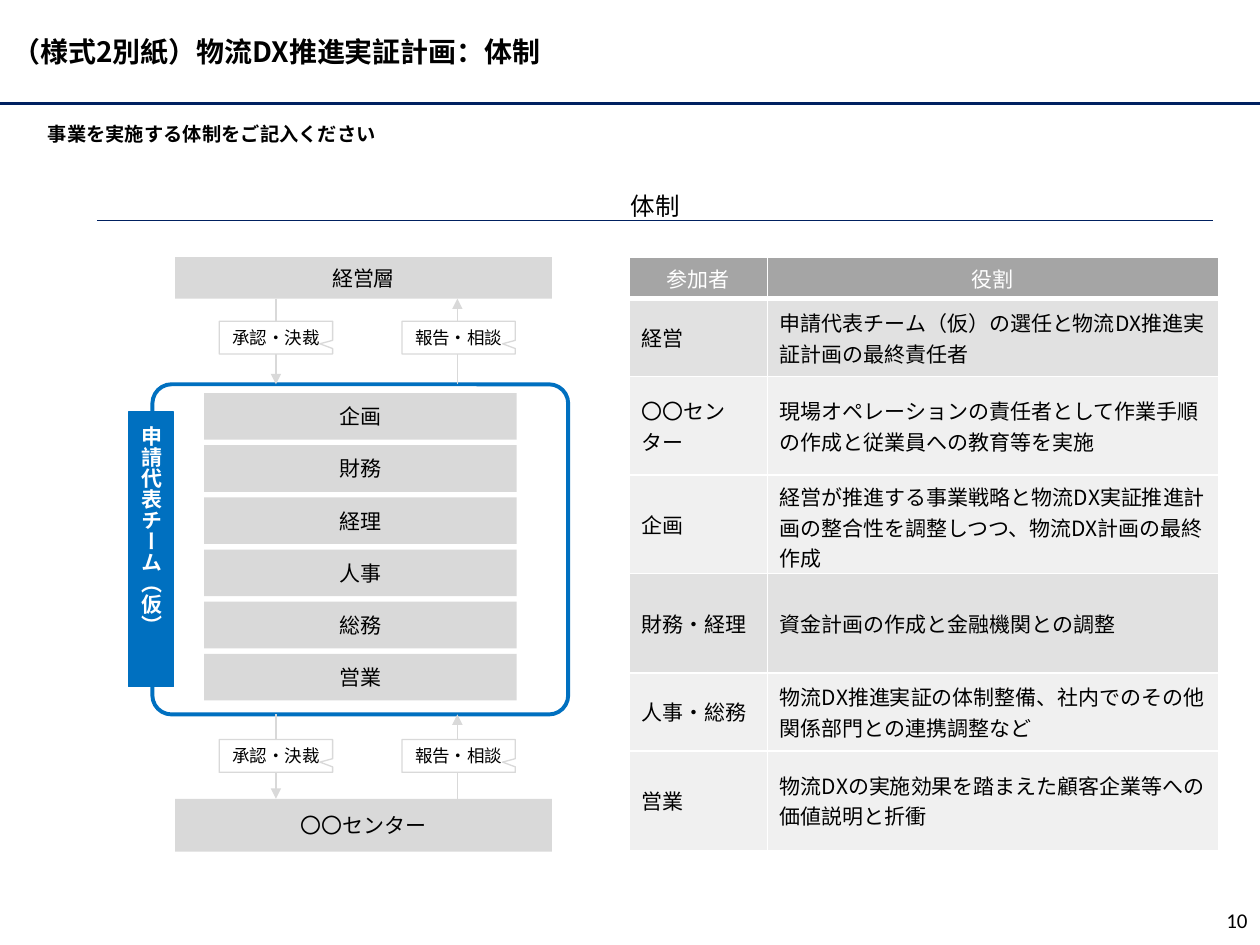
from dataclasses import dataclass

from lxml.etree import SubElement
from pptx import Presentation
from pptx.dml.color import RGBColor
from pptx.enum.shapes import MSO_CONNECTOR as Connector, MSO_SHAPE as Preset
from pptx.enum.text import MSO_ANCHOR as Anchor, MSO_AUTO_SIZE as AutoSize, PP_ALIGN as Align
from pptx.oxml.ns import qn
from pptx.util import Inches, Pt

FONT = "Noto Sans CJK JP"
COLORS = {
    "black": "000000", "white": "FFFFFF", "navy": "002060", "blue": "0070C0",
    "gray": "D9D9D9", "header": "A5A5A5", "dark_row": "E1E1E1", "light_row": "F0F0F0",
}


@dataclass(frozen=True)
class Box:
    left: float
    top: float
    width: float
    height: float

    def lengths(self) -> list[int]:
        return [Inches(v) for v in (self.left, self.top, self.width, self.height)]


@dataclass(frozen=True)
class Flow:
    """A vertical arrow with a callout saying what is passed along it."""
    label: str
    x: float
    start: float
    end: float
    callout: Box


@dataclass(frozen=True)
class Role:
    member: str
    duty: str
    height: float
    fill: str = "light_row"


LEADERS = Box(1.39, 2.04, 2.99, 0.33)
CENTER = Box(1.39, 6.34, 2.99, 0.42)
TEAM = Box(1.21, 3.05, 3.3, 2.62)
DEPARTMENTS = ["企画", "財務", "経理", "人事", "総務", "営業"]
DEPARTMENT_TOP, DEPARTMENT_PITCH = 3.12, 0.414

TEAM_BOTTOM = TEAM.top + TEAM.height
LEADERS_BOTTOM = LEADERS.top + LEADERS.height
FLOWS = [
    Flow(label, x, *span, Box(callout_left, callout_top, 0.9, 0.26))
    for callout_top, upper, lower in ((2.55, LEADERS_BOTTOM, TEAM.top),
                                      (5.87, TEAM_BOTTOM, CENTER.top))
    for label, x, callout_left, span in (("承認・決裁", 2.19, 1.74, (upper, lower)),
                                         ("報告・相談", 3.63, 3.19, (lower, upper)))
]
ROLES = [
    Role("参加者", "役割", 0.33, "header"),
    Role("経営", "申請代表チーム（仮）の選任と物流DX推進実証計画の最終責任者", 0.62, "dark_row"),
    Role("〇〇センター", "現場オペレーションの責任者として作業手順の作成と従業員への教育等を実施", 0.78),
    Role("企画", "経営が推進する事業戦略と物流DX実証推進計画の整合性を調整しつつ、物流DX計画の最終作成", 0.78),
    Role("財務・経理", "資金計画の作成と金融機関との調整", 0.79, "dark_row"),
    Role("人事・総務", "物流DX推進実証の体制整備、社内でのその他関係部門との連携調整など", 0.62),
    Role("営業", "物流DXの実施効果を踏まえた顧客企業等への価値説明と折衝", 0.79),
]


def rgb(name: str) -> RGBColor:
    return RGBColor.from_string(COLORS[name])


def write(frame, text: str, *, size: float = 12, color: str = "black", bold: bool = False,
          align=Align.CENTER, anchor=Anchor.MIDDLE, insets=(0.1, 0.05, 0.1, 0.05),
          font: str = FONT) -> None:
    """Fill a text frame or table cell; insets run left, top, right, bottom."""
    frame.margin_left, frame.margin_top, frame.margin_right, frame.margin_bottom = map(Inches, insets)
    frame.vertical_anchor = anchor
    paragraph = getattr(frame, "text_frame", frame).paragraphs[0]
    paragraph.alignment = align
    run = paragraph.add_run()
    run.text = text
    run.font.size, run.font.bold, run.font.name = Pt(size), bold, font
    run.font.color.rgb = rgb(color)
    SubElement(run.font._element, qn("a:ea"), typeface=font)


def add_text(slide, box: Box, text: str, **style) -> None:
    frame = slide.shapes.add_textbox(*box.lengths()).text_frame
    frame.word_wrap = True
    write(frame, text, **style)


def fill_placeholder(placeholder, box: Box, text: str, **style) -> None:
    placeholder.left, placeholder.top, placeholder.width, placeholder.height = box.lengths()
    frame = placeholder.text_frame
    frame.auto_size = AutoSize.NONE
    write(frame, text, bold=True, align=Align.LEFT, **style)
    properties = frame.paragraphs[0]._p.get_or_add_pPr()
    properties.set("marL", "0")
    properties.set("indent", "0")
    frame.paragraphs[0].space_before = Pt(0)
    SubElement(properties, qn("a:buNone"))


def add_shape(slide, preset, box: Box, *, fill: str | None = None, line: str | None = None,
              weight: float = 0.75, adjustments=()):
    shape = slide.shapes.add_shape(preset, *box.lengths())
    shape.shadow.inherit = False
    for index, value in enumerate(adjustments):
        shape.adjustments[index] = value
    if fill:
        shape.fill.solid()
        shape.fill.fore_color.rgb = rgb(fill)
    else:
        shape.fill.background()
    if line:
        shape.line.color.rgb = rgb(line)
        shape.line.width = Pt(weight)
    else:
        shape.line.fill.background()
    return shape


def add_unit(slide, box: Box, text: str) -> None:
    unit = add_shape(slide, Preset.RECTANGLE, box, fill="gray")
    write(unit.text_frame, text, insets=(0.04,) * 4)


def add_line(slide, start: tuple[float, float], end: tuple[float, float], *, color: str,
             weight: float = 0.75, arrow: bool = False) -> None:
    line = slide.shapes.add_connector(Connector.STRAIGHT, *map(Inches, start + end))
    line.line.color.rgb = rgb(color)
    line.line.width = Pt(weight)
    if arrow:
        SubElement(line.line._get_or_add_ln(), qn("a:tailEnd"), type="triangle")
    SubElement(line._element.spPr, qn("a:effectLst"))


def add_flow(slide, flow: Flow) -> None:
    add_line(slide, (flow.x, flow.start), (flow.x, flow.end), color="gray", arrow=True)
    callout = add_shape(slide, Preset.RECTANGULAR_CALLOUT, flow.callout, fill="white",
                        line="gray", adjustments=(0.388, 0.188))
    write(callout.text_frame, flow.label, size=10)


def add_border(cell, side: str, weight: float) -> None:
    border = SubElement(cell._tc.get_or_add_tcPr(), qn(f"a:ln{side}"), w=str(Pt(weight)))
    SubElement(SubElement(border, qn("a:solidFill")), qn("a:srgbClr"), val=COLORS["white"])


def add_roles(slide, box: Box, column_widths: tuple[float, float]) -> None:
    table = slide.shapes.add_table(len(ROLES), len(column_widths), *box.lengths()).table
    for column, width in zip(table.columns, column_widths):
        column.width = Inches(width)
    for index, (row, role) in enumerate(zip(table.rows, ROLES)):
        row.height = Inches(role.height)
        is_header = index == 0
        for cell, text in zip(row.cells, (role.member, role.duty)):
            write(cell, text, color="white" if is_header else "black",
                  align=Align.CENTER if is_header else Align.LEFT)
            weights = {"L": 1, "R": 1, "T": 3 if index == 1 else 1, "B": 3 if is_header else 1}
            for side, weight in weights.items():
                add_border(cell, side, weight)
            cell.fill.solid()
            cell.fill.fore_color.rgb = rgb(role.fill)


def add_organization(slide) -> None:
    add_unit(slide, LEADERS, "経営層")
    add_shape(slide, Preset.ROUNDED_RECTANGLE, TEAM, line="blue", weight=2.25, adjustments=(0.058,))
    team_label = add_shape(slide, Preset.RECTANGLE, Box(1.02, 3.27, 0.36, 2.18),
                           fill="blue", line="blue")
    write(team_label.text_frame, "申請代表チーム（仮）", color="white", bold=True,
          align=Align.LEFT, insets=(0.04, 0.11, 0.04, 0.04))
    team_label.text_frame._txBody.bodyPr.set("vert", "eaVert")
    add_unit(slide, CENTER, "〇〇センター")
    for index, department in enumerate(DEPARTMENTS):
        top = DEPARTMENT_TOP + index * DEPARTMENT_PITCH
        add_unit(slide, Box(1.62, top, 2.48, 0.37), department)
    for flow in FLOWS:
        add_flow(slide, flow)


def main() -> None:
    deck = Presentation()
    deck.slide_width, deck.slide_height = Inches(10), Inches(7.5)
    slide = deck.slides.add_slide(deck.slide_layouts[1])
    title, instruction = slide.placeholders
    fill_placeholder(title, Box(0, 0, 10, 0.82), "（様式2別紙）物流DX推進実証計画：体制", size=16)
    fill_placeholder(instruction, Box(0.28, 0.92, 9.46, 0.29),
                     "事業を実施する体制をご記入ください", size=11, anchor=Anchor.TOP)
    add_line(slide, (0, 0.82), (10, 0.82), color="navy", weight=1.5)
    add_text(slide, Box(0.77, 1.45, 8.86, 0.3), "体制", size=14, anchor=Anchor.BOTTOM,
             insets=(0.1, 0, 0.1, 0))
    add_line(slide, (0.77, 1.75), (9.63, 1.75), color="navy")
    add_organization(slide)
    add_roles(slide, Box(4.99, 2.04, 4.68, 4.72), (1.1, 3.58))
    add_text(slide, Box(7.75, 7.1, 2.25, 0.4), "10", align=Align.RIGHT, font="Calibri")
    deck.save("out.pptx")


if __name__ == "__main__":
    main()
